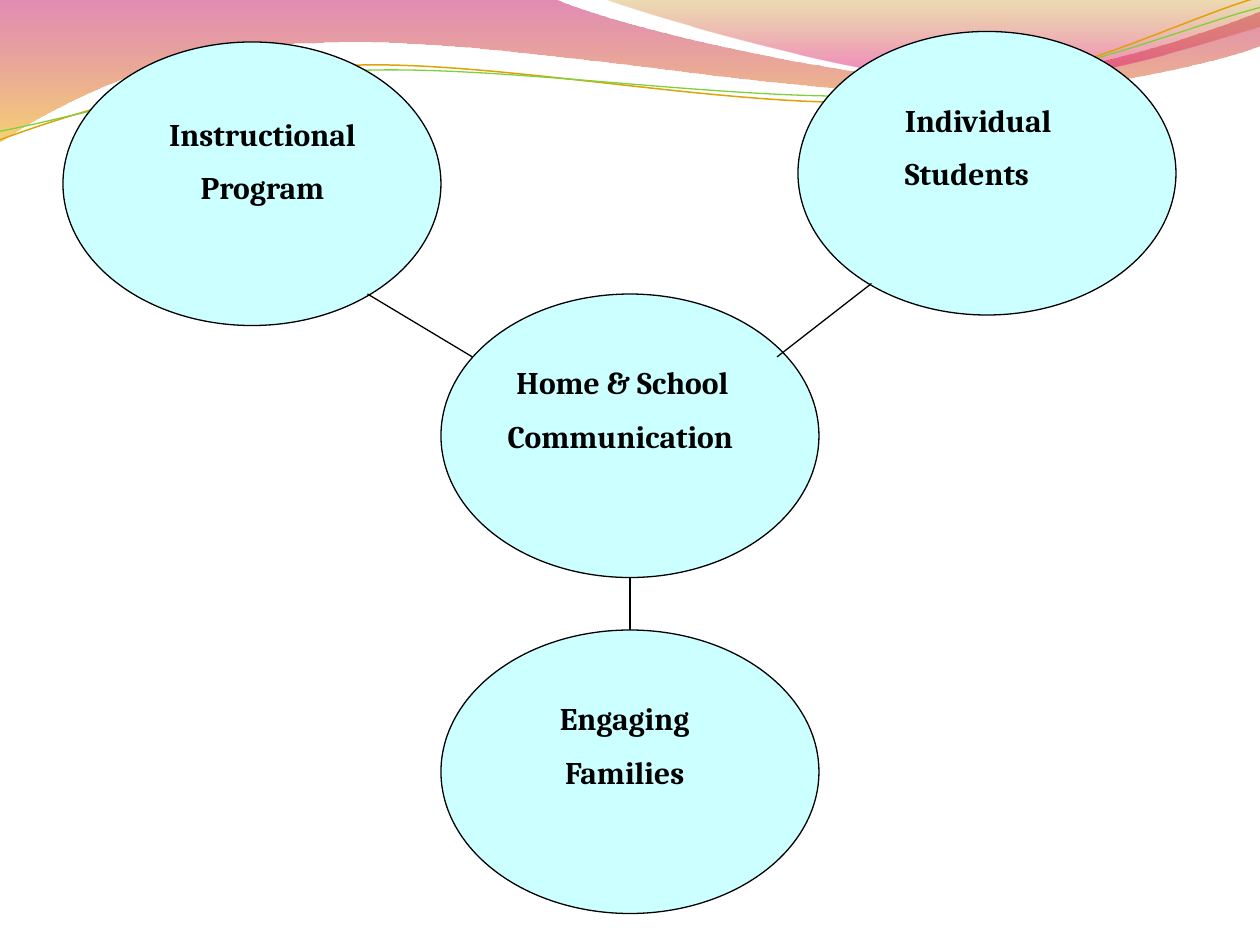
import pptx
import pptx.dml.color
import pptx.enum.shapes
import pptx.enum.text
import pptx.oxml.ns
import pptx.oxml.xmlchemy
import pptx.util
from lxml import etree

Pt = pptx.util.Pt
qn = pptx.oxml.ns.qn
LEFT = pptx.enum.text.PP_ALIGN.LEFT
CENTER = pptx.enum.text.PP_ALIGN.CENTER


def color(hex_string):
    return pptx.dml.color.RGBColor.from_string(hex_string)


class Diagram:
    ink = "000000"
    bubble_fill = "CCFFFF"
    bubble_size = (216, 162)
    font_format = {"name": "Cambria", "size": Pt(18), "bold": True}

    def __init__(self, slide):
        self.slide = slide
        self.shapes = slide.shapes

    def outline(self, item, hex_string, width):
        item.line.color.rgb = color(hex_string)
        item.line.width = Pt(width)

    def curve(self, start, steps, closed):
        builder = self.shapes.build_freeform(Pt(start[0]), Pt(start[1]), scale=1.0)
        points = [(Pt(x), Pt(y)) for step in steps for x, y in step]
        builder.add_line_segments(points, close=closed)
        shape = builder.convert_to_shape()
        shape.shadow.inherit = False
        segments = iter(list(shape._element.iter(qn("a:lnTo"))))
        for step in steps:
            first = next(segments)
            if len(step) == 3:
                bezier = etree.Element(qn("a:cubicBezTo"))
                first.addprevious(bezier)
                for segment in (first, next(segments), next(segments)):
                    bezier.append(segment[0])
                    segment.getparent().remove(segment)
        return shape

    def wave(self, start, steps, stops):
        shape = self.curve(start, steps, True)
        shape.line.fill.background()
        shape.fill.gradient()
        shape.fill.gradient_angle = 270
        for stop, (position, hex_string, _) in zip(shape.fill.gradient_stops, stops):
            stop.position = position
            stop.color.rgb = color(hex_string)
        for tint, (_, _, opacity) in zip(shape._element.iter(qn("a:srgbClr")), stops):
            etree.SubElement(tint, qn("a:alpha"), val=str(opacity * 1000))

    def strand(self, start, steps, hex_string, width):
        shape = self.curve(start, steps, False)
        shape.fill.background()
        self.outline(shape, hex_string, width)

    def bubble(self, left, top):
        oval = pptx.enum.shapes.MSO_SHAPE.OVAL
        width, height = self.bubble_size
        shape = self.shapes.add_shape(oval, Pt(left), Pt(top), Pt(width), Pt(height))
        shape.shadow.inherit = False
        shape.fill.solid()
        shape.fill.fore_color.rgb = color(self.bubble_fill)
        self.outline(shape, self.ink, 0.75)
        return shape

    def link(self, x1, y1, x2, y2):
        straight = pptx.enum.shapes.MSO_CONNECTOR.STRAIGHT
        connector = self.shapes.add_connector(straight, Pt(x1), Pt(y1), Pt(x2), Pt(y2))
        self.outline(connector, self.ink, 0.75)
        etree.SubElement(connector._element.spPr, qn("a:effectLst"))
        return connector

    def label(self, left, top, width, height, lines, align, indents=(36, 36)):
        box = self.shapes.add_textbox(Pt(left), Pt(top), Pt(width), Pt(height))
        frame = box.text_frame
        frame.word_wrap = True
        frame.auto_size = pptx.enum.text.MSO_AUTO_SIZE.SHAPE_TO_FIT_TEXT
        frame.text = "\n".join(lines)
        for paragraph, indent in zip(frame.paragraphs, indents):
            paragraph.alignment = align
            properties = paragraph._p.get_or_add_pPr()
            properties.set("marL", str(Pt(indent)))
            spacing = etree.SubElement(properties, qn("a:spcBef"))
            etree.SubElement(spacing, qn("a:spcPct"), val="50000")
            font = paragraph.runs[0].font
            for name, value in self.font_format.items():
                setattr(font, name, value)
            font.color.rgb = color(self.ink)


def main():
    presentation = pptx.Presentation()
    presentation.slide_width = Pt(720)
    presentation.slide_height = Pt(540)
    diagram = Diagram(presentation.slides.add_slide(presentation.slide_layouts[6]))

    diagram.wave(
        (0, -0.7),
        [
            [(316.8, -0.7)],
            [(342.7, 12.2), (478.1, 45.4), (545.8, 45.4)],
            [(614.2, 45.4), (689.8, 18.7), (720, 6.5)],
            [(720.7, 25.9)],
            [(707.8, 31.7), (626.4, 54.7), (537.1, 54)],
            [(447.8, 54), (275, 20.2), (185, 24.5)],
            [(92.9, 25.2), (33.1, 59.8), (-0.7, 81.4)],
        ],
        [(0, "BD0059", 45), (1, "F0AB00", 55)],
    )
    diagram.wave(
        (344.9, -0.7),
        [
            [(366.5, 7.9), (491, 44.6), (553.7, 46.8)],
            [(616.3, 49.7), (691.9, 23), (720, 15.1)],
            [(720, 0)],
        ],
        [(0, "C38B00", 30), (0.8, "E1006B", 45)],
    )
    diagram.strand(
        (0, 79.9),
        [
            [(34.6, 67), (113.8, 41), (199.4, 37.4)],
            [(284.4, 33.8), (427, 64.1), (513.4, 57.6)],
            [(599.8, 51.1), (675.4, 10.8), (718.6, -1.4)],
        ],
        "E0A209", 0.85,
    )
    diagram.strand(
        (0, 74.9),
        [
            [(33.8, 69.1), (118.1, 43.9), (203.8, 40.3)],
            [(290.2, 36.7), (429.8, 59.8), (516.2, 54)],
            [(601.9, 48.2), (677.5, 15.1), (720, 4.3)],
        ],
        "7FD13B", 0.75,
    )

    diagram.bubble(36, 24)
    diagram.bubble(456, 18)
    diagram.bubble(252, 168)
    families = diagram.bubble(252, 360)

    diagram.link(498, 162, 444, 204)
    diagram.link(210, 168, 270, 204)
    diagram.link(360, 330, 360, 360).end_connect(families, 0)

    diagram.label(228, 204, 276, 62, ["Home & School", "Communication"], LEFT, (60, 55))
    diagram.label(474, 54, 186, 82, ["Individual", "Students"], LEFT)
    diagram.label(30, 62, 204, 82, ["Instructional", "Program"], CENTER)
    diagram.label(252, 396, 174, 82, ["Engaging", "Families"], CENTER)

    presentation.save("out.pptx")


if __name__ == "__main__":
    main()
